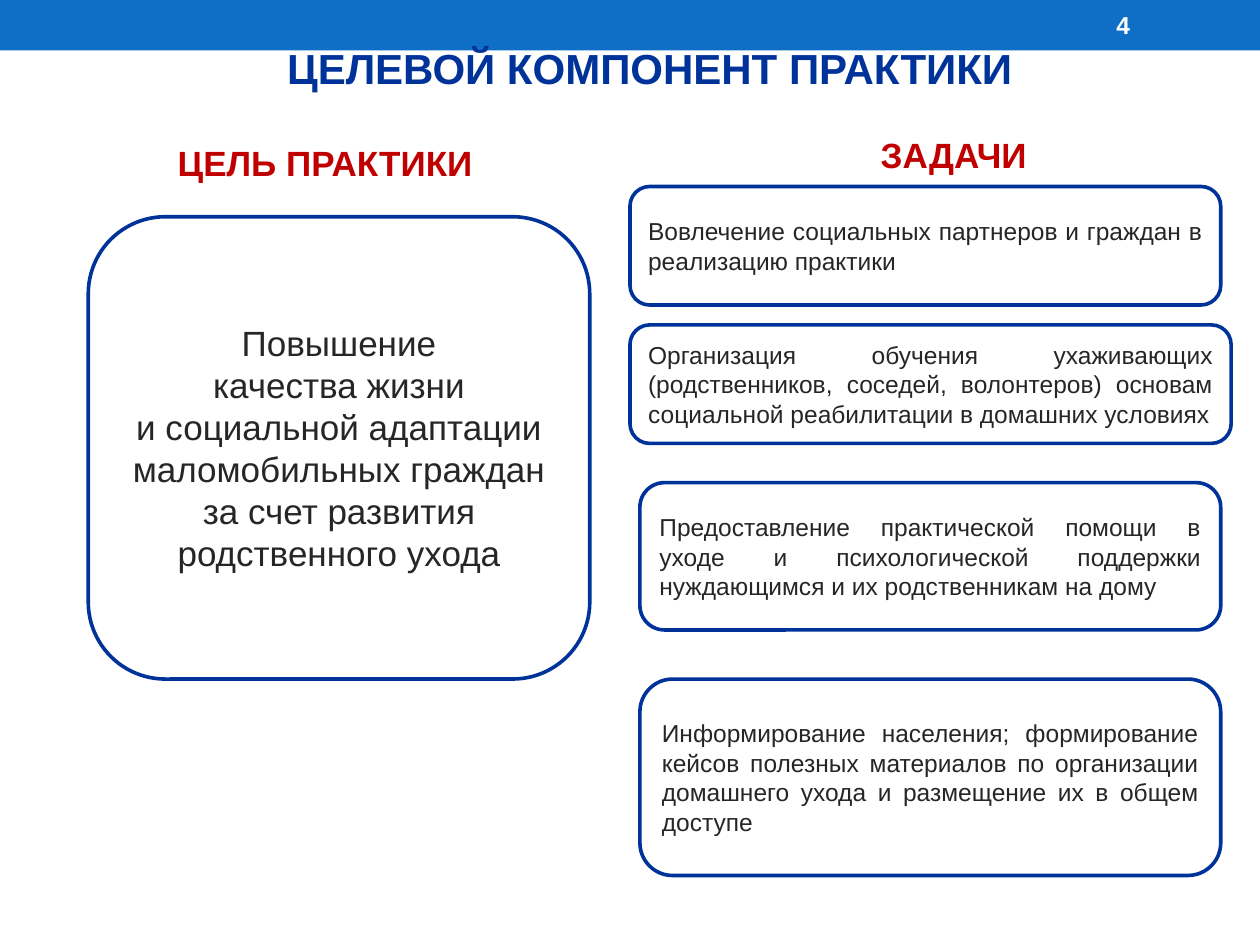
from pptx import Presentation
from pptx.dml.color import RGBColor
from pptx.enum.shapes import MSO_SHAPE
from pptx.enum.text import MSO_ANCHOR, PP_ALIGN
from pptx.util import Cm, Pt

RECTANGLE, ROUNDED = MSO_SHAPE.RECTANGLE, MSO_SHAPE.ROUNDED_RECTANGLE
TOP, MIDDLE = MSO_ANCHOR.TOP, MSO_ANCHOR.MIDDLE
CENTER, JUSTIFY = PP_ALIGN.CENTER, PP_ALIGN.JUSTIFY

WHITE = RGBColor(0xFF, 0xFF, 0xFF)
BAND_BLUE = RGBColor(0x0F, 0x6F, 0xC6)
NAVY = RGBColor(0x00, 0x33, 0x99)
RED = RGBColor(0xC0, 0x00, 0x00)
INK = RGBColor(0x26, 0x26, 0x26)

GOAL = [
    "Повышение",
    "качества жизни",
    "и социальной адаптации маломобильных граждан за счет развития родственного ухода",
]
TASKS = [
    ((12.7, 3.76, 11.91, 2.39),
     "Вовлечение социальных партнеров и граждан в реализацию практики"),
    ((12.7, 6.55, 12.12, 2.39),
     "Организация обучения ухаживающих (родственников, соседей, волонтеров) "
     "основам социальной реабилитации в домашних условиях"),
    ((12.9, 9.73, 11.71, 2.97),
     "Предоставление практической помощи в уходе и психологической поддержки "
     "нуждающимся и их родственникам на дому"),
    ((12.9, 13.69, 11.71, 3.96),
     "Информирование населения; формирование кейсов полезных материалов по "
     "организации домашнего ухода и размещение их в общем доступе"),
]


def write(frame, lines, align, anchor, size, color, bold=False):
    """Fill a text frame with equally formatted paragraphs."""
    frame.word_wrap = True
    frame.vertical_anchor = anchor
    font_format = {"name": "Arial", "size": Pt(size), "bold": bold}
    for index, line in enumerate(lines):
        paragraph = frame.paragraphs[0] if index == 0 else frame.add_paragraph()
        paragraph.alignment = align
        run = paragraph.add_run()
        run.text = line
        for attribute, value in font_format.items():
            setattr(run.font, attribute, value)
        run.font.color.rgb = color


def add_band(slide):
    """Draw the blue band across the top."""
    band = slide.shapes.add_shape(RECTANGLE, 0, 0, Cm(25.4), Cm(1.02))
    band.shadow.inherit = False
    band.fill.solid()
    band.fill.fore_color.rgb = BAND_BLUE
    band.line.fill.background()


def add_label(slide, box, text, size, color, anchor=TOP):
    """Add a bold centred line of text."""
    label = slide.shapes.add_textbox(*map(Cm, box))
    write(label.text_frame, [text], CENTER, anchor, size, color, bold=True)


def add_card(slide, box, lines, align, size):
    """Add a white rounded card with a navy outline."""
    card = slide.shapes.add_shape(ROUNDED, *map(Cm, box))
    card.shadow.inherit = False
    card.fill.solid()
    card.fill.fore_color.rgb = WHITE
    card.line.color.rgb = NAVY
    card.line.width = Pt(2.08)
    write(card.text_frame, lines, align, MIDDLE, size, INK)


def main():
    """Build the slide and save it."""
    presentation = Presentation()
    presentation.slide_width, presentation.slide_height = Cm(25.4), Cm(19.05)
    slide = presentation.slides.add_slide(presentation.slide_layouts[6])

    add_band(slide)
    add_label(slide, (21.16, 0.05, 2.97, 0.91), "4", 14, WHITE, MIDDLE)
    add_label(slide, (3.18, 0.74, 19.84, 1.27), "ЦЕЛЕВОЙ КОМПОНЕНТ ПРАКТИКИ", 24, NAVY)
    add_label(slide, (2.11, 2.72, 8.89, 1.96), "ЦЕЛЬ ПРАКТИКИ", 20, RED)
    add_label(slide, (15.16, 2.57, 8.13, 1.12), "ЗАДАЧИ", 20, RED)

    add_card(slide, (1.78, 4.37, 10.11, 9.32), GOAL, CENTER, 20)
    for box, task in TASKS:
        add_card(slide, box, [task], JUSTIFY, 14)

    presentation.save("out.pptx")


if __name__ == "__main__":
    main()
